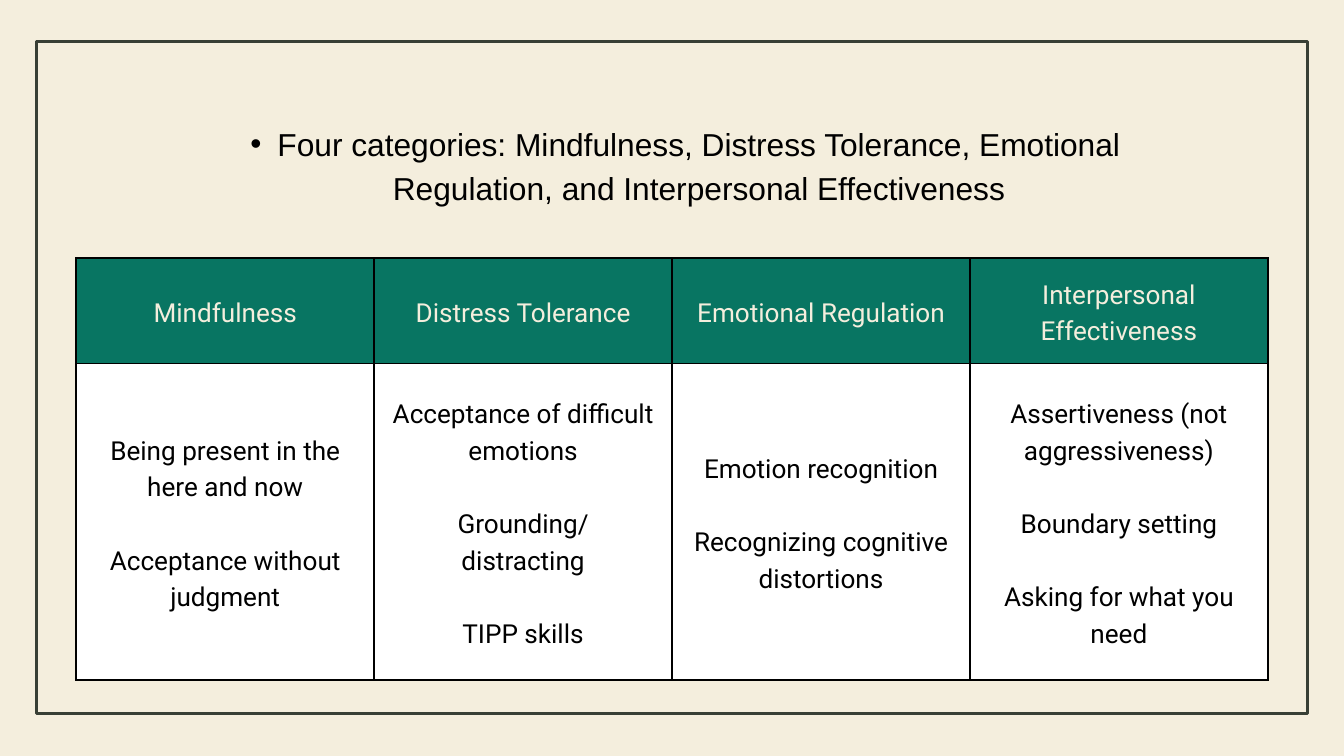
from lxml.etree import SubElement
from pptx import Presentation
from pptx.dml.color import RGBColor
from pptx.enum.shapes import MSO_SHAPE
from pptx.enum.text import MSO_ANCHOR, MSO_AUTO_SIZE, PP_ALIGN
from pptx.oxml.ns import qn
from pptx.util import Cm, Pt

HEADING = ("Four categories: Mindfulness, Distress Tolerance, "
           "Emotional Regulation, and Interpersonal Effectiveness")

# Category -> skills; a skill's lines are listed as a tuple
SKILLS = {
    "Mindfulness": [("Being present in the here and now",),
                    ("Acceptance without judgment",)],
    "Distress Tolerance": [("Acceptance of difficult emotions",),
                           ("Grounding/", "distracting"),
                           ("TIPP skills",)],
    "Emotional Regulation": [("Emotion recognition",),
                             ("Recognizing cognitive distortions",)],
    "Interpersonal Effectiveness": [("Assertiveness (not aggressiveness)",),
                                    ("Boundary setting",),
                                    ("Asking for what you need",)],
}

THEME = {
    "cream": "F4EEDD", "frame": "383F35", "green": "087562",
    "white": "FFFFFF", "black": "000000",
    "heading_font": "Arial", "heading_size": 34, "heading_leading": 47.6,
    "table_font": "Roboto", "table_size": 28, "table_leading": 39.2,
    "frame_line": 3, "border_line": 1.87,
}

SLIDE_W, SLIDE_H = Cm(50.8), Cm(28.58)
COL_W, HEADER_H, BODY_H = Cm(11.26), Cm(3.99), Cm(11.96)
TABLE_TOP = Cm(9.75)
CELL_MARGIN = Cm(0.53)


def color(name):
    return RGBColor.from_string(THEME[name])


def add_run(p, text, role, ink):
    r = p.add_run()
    r.text = text
    r.font.name = THEME[f"{role}_font"]
    r.font.size = Pt(THEME[f"{role}_size"])
    r.font.bold = False
    r.font.color.rgb = color(ink)


def add_frame(s):
    left, top = Cm(1.37), Cm(1.57)
    frame = s.shapes.add_shape(MSO_SHAPE.RECTANGLE, left, top,
                               SLIDE_W - 2 * left, Cm(25.42))
    frame.shadow.inherit = False
    frame.fill.background()
    frame.line.color.rgb = color("frame")
    frame.line.width = Pt(THEME["frame_line"])


def add_heading(s):
    title = s.shapes.title
    title.left, title.top, title.width, title.height = (
        Cm(7.82), Cm(4.47), Cm(35.18), Cm(3.33))
    tf = title.text_frame
    tf.word_wrap = True
    tf.auto_size = MSO_AUTO_SIZE.NONE
    tf.vertical_anchor = MSO_ANCHOR.TOP
    tf.margin_left = tf.margin_top = tf.margin_right = tf.margin_bottom = 0
    p = tf.paragraphs[0]
    pPr = p._p.get_or_add_pPr()
    pPr.set("marL", str(Cm(2.03)))
    pPr.set("indent", str(-Cm(1.02)))
    SubElement(pPr, qn("a:buFont"), typeface="Arial")
    SubElement(pPr, qn("a:buChar"), char="•")
    p.alignment = PP_ALIGN.CENTER
    p.line_spacing = Pt(THEME["heading_leading"])
    add_run(p, HEADING, "heading", "black")


def set_borders(cell):
    """Outline all four sides; borders must come before the fill in tcPr."""
    tcPr = cell._tc.get_or_add_tcPr()
    for side in ("a:lnL", "a:lnR", "a:lnT", "a:lnB"):
        ln = SubElement(tcPr, qn(side), w=str(Pt(THEME["border_line"])))
        fill = SubElement(ln, qn("a:solidFill"))
        SubElement(fill, qn("a:srgbClr"), val=THEME["black"])


def fill_cell(cell, items, ink, background):
    set_borders(cell)
    cell.fill.solid()
    cell.fill.fore_color.rgb = color(background)
    cell.vertical_anchor = MSO_ANCHOR.MIDDLE
    cell.margin_left = cell.margin_right = CELL_MARGIN
    cell.margin_top = cell.margin_bottom = CELL_MARGIN
    tf = cell.text_frame
    for i, lines in enumerate(items):
        p = tf.add_paragraph() if i else tf.paragraphs[0]
        p.alignment = PP_ALIGN.CENTER
        p.line_spacing = Pt(THEME["table_leading"])
        if i:
            p.space_before = Pt(THEME["table_leading"])
        for j, line in enumerate(lines):
            if j:
                p.add_line_break()
            add_run(p, line, "table", ink)


def add_skills_table(s):
    width = COL_W * len(SKILLS)
    table = s.shapes.add_table(2, len(SKILLS), (SLIDE_W - width) // 2, TABLE_TOP,
                               width, HEADER_H + BODY_H).table
    table.first_row = table.horz_banding = False
    table.rows[0].height, table.rows[1].height = HEADER_H, BODY_H
    for col, (category, skills) in enumerate(SKILLS.items()):
        table.columns[col].width = COL_W
        fill_cell(table.cell(0, col), [(category,)], "cream", "green")
        fill_cell(table.cell(1, col), skills, "black", "white")


def main():
    prs = Presentation()
    prs.slide_width, prs.slide_height = SLIDE_W, SLIDE_H
    s = prs.slides.add_slide(prs.slide_layouts[5])
    s.background.fill.solid()
    s.background.fill.fore_color.rgb = color("cream")
    add_frame(s)
    add_heading(s)
    add_skills_table(s)
    prs.save("out.pptx")


if __name__ == "__main__":
    main()
